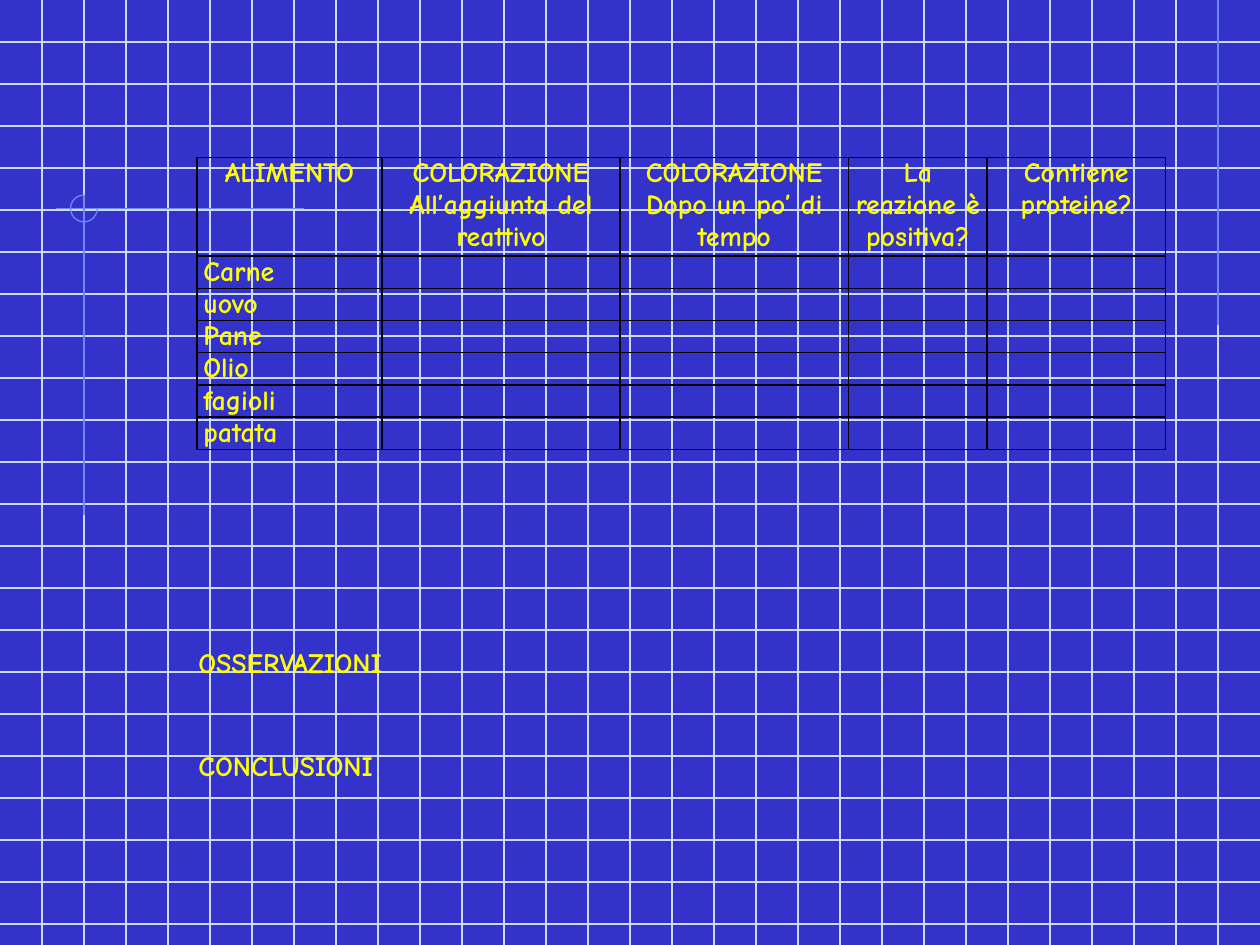
from pptx import Presentation
from pptx.dml.color import RGBColor
from pptx.enum.shapes import MSO_CONNECTOR, MSO_SHAPE
from pptx.enum.text import MSO_ANCHOR, PP_ALIGN as Align
from pptx.oxml.xmlchemy import OxmlElement
from pptx.util import Pt

BACKGROUND = RGBColor(0x33, 0x33, 0xCC)
GRID = RGBColor(0xCF, 0xDB, 0xFD)
ACCENT = RGBColor(0x6F, 0x89, 0xF7)
YELLOW = RGBColor(0xFF, 0xFF, 0x00)
BLACK = RGBColor(0x00, 0x00, 0x00)

WIDTH, HEIGHT, GRID_STEP = 720, 540, 24

HEADINGS = [
    "ALIMENTO",
    "COLORAZIONE\nAll’aggiunta del reattivo",
    "COLORAZIONE\nDopo un po’ di tempo",
    "La reazione è positiva?",
    "Contiene proteine?",
]
FOODS = ["Carne", "uovo", "Pane", "Olio", "fagioli", "patata"]
COLUMN_WIDTHS = [105.7, 136, 130.6, 79.2, 102]
HEADING_HEIGHT, FOOD_HEIGHT = 56.4, 18.4


class Sheet:
    font_name = "Comic Neue"
    font_size = 16
    line_width = 0.75
    border_width = 1

    def __init__(self, slide):
        self.slide = slide
        background = slide.background.fill
        background.solid()
        background.fore_color.rgb = BACKGROUND

    def style(self, paragraph, align):
        paragraph.alignment = align
        font = paragraph.font
        font.name = self.font_name
        font.size = Pt(self.font_size)
        font.bold = True
        font.color.rgb = YELLOW

    def line(self, x1, y1, x2, y2, color):
        connector = self.slide.shapes.add_connector(
            MSO_CONNECTOR.STRAIGHT, Pt(x1), Pt(y1), Pt(x2), Pt(y2))
        connector.line.color.rgb = color
        connector.line.width = Pt(self.line_width)
        connector._element.spPr.append(OxmlElement("a:effectLst"))

    def arc(self, left, top, size, start, end, color):
        """Draw a clockwise arc between two angles in degrees."""
        arc = self.slide.shapes.add_shape(
            MSO_SHAPE.ARC, Pt(left), Pt(top), Pt(size), Pt(size))
        # Adjustments count in 100000ths, angles in 60000ths of a degree.
        arc.adjustments[0] = start * 0.6
        arc.adjustments[1] = end * 0.6
        arc.shadow.inherit = False
        arc.fill.background()
        arc.line.color.rgb = color
        arc.line.width = Pt(self.line_width)

    def border(self, cell):
        properties = cell._tc.get_or_add_tcPr()
        for position, side in enumerate(("lnL", "lnR", "lnT", "lnB")):
            edge = OxmlElement(f"a:{side}")
            edge.set("w", str(Pt(self.border_width)))
            fill = OxmlElement("a:solidFill")
            color = OxmlElement("a:srgbClr")
            color.set("val", str(BLACK))
            fill.append(color)
            edge.append(fill)
            properties.insert(position, edge)

    def cell(self, cell, text, align):
        cell.fill.background()
        self.border(cell)
        cell.margin_left = cell.margin_right = Pt(3.6)
        cell.margin_top = cell.margin_bottom = 0
        cell.text = text
        for paragraph in cell.text_frame.paragraphs:
            self.style(paragraph, align)
            if not text:
                # An empty cell takes its line height from the end mark.
                end_mark = OxmlElement("a:endParaRPr")
                end_mark.set("sz", str(self.font_size * 100))
                paragraph._p.append(end_mark)

    def table(self, left, top, rows, widths, heights):
        table = self.slide.shapes.add_table(
            len(rows), len(widths), Pt(left), Pt(top),
            Pt(sum(widths)), Pt(sum(heights))).table
        table.first_row = table.horz_banding = False
        for column, width in zip(table.columns, widths):
            column.width = Pt(width)
        for row, height in zip(table.rows, heights):
            row.height = Pt(height)
        for r, texts in enumerate(rows):
            align = Align.JUSTIFY if r else Align.CENTER
            for c, text in enumerate(texts):
                self.cell(table.cell(r, c), text, align)

    def text(self, left, top, width, height, lines, gap):
        frame = self.slide.shapes.add_textbox(
            Pt(left), Pt(top), Pt(width), Pt(height)).text_frame
        frame.word_wrap = True
        frame.vertical_anchor = MSO_ANCHOR.TOP
        frame.margin_left = frame.margin_right = 0
        frame.margin_top = frame.margin_bottom = 0
        frame.text = "\n".join(lines)
        for number, paragraph in enumerate(frame.paragraphs):
            self.style(paragraph, Align.JUSTIFY)
            if number:
                paragraph.space_before = Pt(gap)


def main():
    presentation = Presentation()
    presentation.slide_width, presentation.slide_height = Pt(WIDTH), Pt(HEIGHT)
    sheet = Sheet(presentation.slides.add_slide(presentation.slide_layouts[6]))

    for y in range(GRID_STEP, HEIGHT, GRID_STEP):
        sheet.line(0, y, WIDTH, y, GRID)
    for x in range(GRID_STEP, WIDTH, GRID_STEP):
        sheet.line(x, 0, x, HEIGHT, GRID)

    sheet.line(696, 0, 696, 186, ACCENT)
    sheet.line(173.5, 119.2, 32, 119.2, ACCENT)
    sheet.line(48, 111.5, 48, 294.5, ACCENT)
    sheet.arc(40.3, 111.5, 15.3, 0, 270, ACCENT)

    blanks = [""] * (len(HEADINGS) - 1)
    rows = [HEADINGS] + [[food] + blanks for food in FOODS]
    heights = [HEADING_HEIGHT] + [FOOD_HEIGHT] * len(FOODS)
    sheet.table(112.6, 90, rows, COLUMN_WIDTHS, heights)

    sheet.text(113.4, 369, 554, 78, ["OSSERVAZIONI", "CONCLUSIONI"], gap=39.3)

    presentation.save("out.pptx")


if __name__ == "__main__":
    main()
